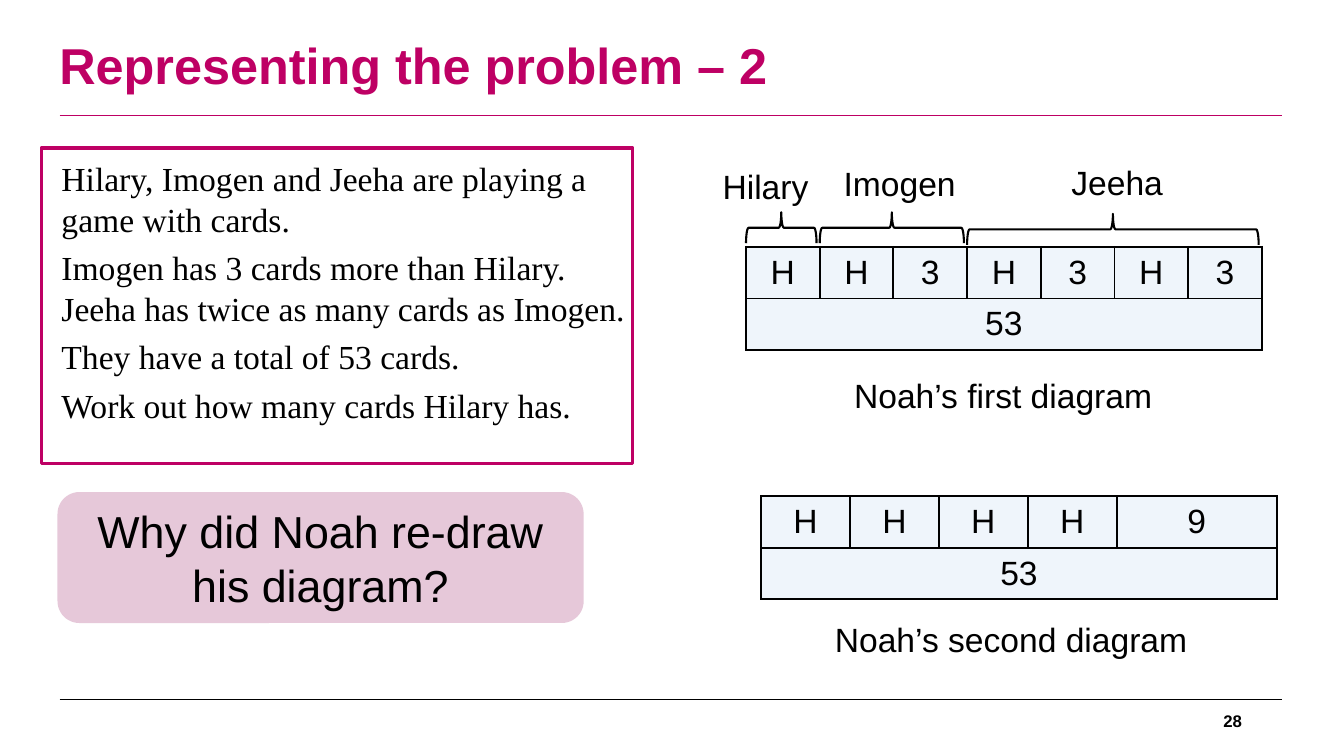
from dataclasses import dataclass

from lxml import etree
from pptx import Presentation
from pptx.dml.color import RGBColor
from pptx.enum.shapes import MSO_CONNECTOR, MSO_SHAPE
from pptx.enum.text import MSO_ANCHOR, MSO_AUTO_SIZE, PP_ALIGN
from pptx.oxml.ns import qn
from pptx.util import Cm, Pt

LEFT, MID, RIGHT = PP_ALIGN.LEFT, PP_ALIGN.CENTER, PP_ALIGN.RIGHT
TOP, CENTRE = MSO_ANCHOR.TOP, MSO_ANCHOR.MIDDLE
PINK, BLACK, PALE, ROSE = "BE0064", "000000", "EFF5FB", "E6C8D9"
COL, ROW = 1.857, 1.3  # card column and bar row


@dataclass
class Bar:
    left: float
    top: float
    cols: list[float]
    cards: str


@dataclass
class Name:
    text: str
    left: float
    top: float
    start: int  # first column under the brace
    count: int  # columns under the brace
    mid: float  # height of the brace's centre


@dataclass
class Label:
    text: str
    left: float
    top: float
    width: float


BARS = [
    Bar(18.8, 6.22, [COL] * 7, "HH3H3H3"),
    Bar(19.18, 12.5, [2.24] * 4 + [4.04], "HHHH9"),
]
NAMES = [
    Name("Hilary", 17.96, 4.06, 0, 1, 5.74),
    Name("Imogen", 21.01, 3.99, 1, 2, 5.74),
    Name("Jeeha", 26.75, 3.96, 3, 4, 5.78),
]
LABELS = [
    Label("Noah’s first diagram", 21.18, 9.25, 8.2),
    Label("Noah’s second diagram", 19.69, 15.39, 11.58),
]
# Each line of the problem with the space before it
LINES = [
    ("Hilary, Imogen and Jeeha are playing a game with cards.", 0),
    ("Imogen has 3 cards more than Hilary.", 6),
    ("Jeeha has twice as many cards as Imogen.", 0),
    ("They have a total of 53 cards.", 6),
    ("Work out how many cards Hilary has.", 6),
]


def color(code: str) -> RGBColor:
    return RGBColor.from_string(code)


def write(para, text: str, size=24, font="Arial", ink=BLACK, bold=False,
          align=LEFT, before=0, after=0, pitch=None) -> None:
    para.alignment = align
    para.space_before, para.space_after = Pt(before), Pt(after)
    para.line_spacing = pitch
    run = para.add_run()
    run.text = text
    run.font.name, run.font.size, run.font.bold = font, Pt(size), bold
    run.font.color.rgb = color(ink)


def box(slide, left: float, top: float, width: float, height=1.27, anchor=TOP):
    frame = slide.shapes.add_textbox(
        Cm(left), Cm(top), Cm(width), Cm(height)).text_frame
    frame.word_wrap = True
    frame.vertical_anchor = anchor
    return frame


def shape(slide, kind, left: float, top: float, width: float, height: float,
          fill="", line="", weight=1.5):
    item = slide.shapes.add_shape(kind, Cm(left), Cm(top), Cm(width), Cm(height))
    item.shadow.inherit = False
    if fill:
        item.fill.solid()
        item.fill.fore_color.rgb = color(fill)
    else:
        item.fill.background()
    if line:
        item.line.color.rgb = color(line)
        item.line.width = Pt(weight)
    else:
        item.line.fill.background()
    return item


def rule(slide, top: float, ink: str, weight: float) -> None:
    line = slide.shapes.add_connector(
        MSO_CONNECTOR.STRAIGHT, Cm(1.5), Cm(top), Cm(32.31), Cm(top))
    line.line.color.rgb = color(ink)
    line.line.width = Pt(weight)
    etree.SubElement(line._element.spPr, qn("a:effectLst"))


def edge(cell) -> None:
    props = cell._tc.get_or_add_tcPr()
    for side in ("lnL", "lnR", "lnT", "lnB"):
        line = etree.SubElement(props, qn(f"a:{side}"), w=str(Pt(1.5)))
        fill = etree.SubElement(line, qn("a:solidFill"))
        etree.SubElement(fill, qn("a:srgbClr"), val=BLACK)


def draw_bar(slide, bar: Bar) -> None:
    count = len(bar.cols)
    table = slide.shapes.add_table(
        2, count, Cm(bar.left), Cm(bar.top),
        Cm(sum(bar.cols)), Cm(2 * ROW)).table
    table.first_row = table.horz_banding = False
    for col, width in zip(table.columns, bar.cols):
        col.width = Cm(width)
    for cell in table.iter_cells():
        edge(cell)
        cell.fill.solid()
        cell.fill.fore_color.rgb = color(PALE)
        cell.vertical_anchor = CENTRE
    table.cell(1, 0).merge(table.cell(1, count - 1))
    for i, card in enumerate(bar.cards):
        write(table.cell(0, i).text_frame.paragraphs[0], card, align=MID)
    write(table.cell(1, 0).text_frame.paragraphs[0], "53", align=MID)


def draw_name(slide, name: Name) -> None:
    write(box(slide, name.left, name.top, 3.43).paragraphs[0], name.text)
    # The brace is upright until turned, so its height is its span
    span, deep = name.count * COL - 0.08, 0.78
    centre = BARS[0].left + name.start * COL + span / 2
    brace = shape(slide, MSO_SHAPE.LEFT_BRACE, centre - deep / 2,
                  name.mid - span / 2, deep, span, line=BLACK)
    brace.rotation = 90


def main() -> None:
    deck = Presentation()
    deck.slide_width, deck.slide_height = Cm(33.87), Cm(19.05)
    slide = deck.slides.add_slide(deck.slide_layouts[5])

    # Title, rules and page number
    title = slide.shapes.title
    title.left, title.top = Cm(1.24), Cm(0.3)
    title.width, title.height = Cm(25.4), Cm(2.82)
    title.text_frame.vertical_anchor = CENTRE
    title.text_frame.auto_size = MSO_AUTO_SIZE.NONE
    write(title.text_frame.paragraphs[0], "Representing the problem – 2",
          size=36, ink=PINK, bold=True, pitch=0.9)
    rule(slide, 2.9, PINK, 0.75)
    rule(slide, 17.63, BLACK, 0.75)
    page = box(slide, 23.93, 17.65, 7.62, 1.02, CENTRE)
    write(page.paragraphs[0], "28", size=12, bold=True, align=RIGHT)

    # Problem
    shape(slide, MSO_SHAPE.RECTANGLE, 1.04, 3.73, 14.91, 7.95,
          line=PINK, weight=2.25)
    frame = box(slide, 1.3, 3.86, 14.91, 7.06)
    for i, (text, before) in enumerate(LINES):
        para = frame.add_paragraph() if i else frame.paragraphs[0]
        write(para, text, font="Times New Roman", before=before)

    # Question
    card = shape(slide, MSO_SHAPE.ROUNDED_RECTANGLE, 1.45, 12.4, 13.26, 3.3,
                 fill=ROSE)
    card.text_frame.word_wrap = True
    card.text_frame.vertical_anchor = CENTRE
    write(card.text_frame.paragraphs[0], "Why did Noah re-draw his diagram?",
          size=32, align=MID)

    # Bar diagrams
    for bar in BARS:
        draw_bar(slide, bar)
    for name in NAMES:
        draw_name(slide, name)
    for label in LABELS:
        write(box(slide, label.left, label.top, label.width).paragraphs[0],
              label.text, align=MID, after=6, pitch=Pt(31))

    deck.save("out.pptx")


if __name__ == "__main__":
    main()
